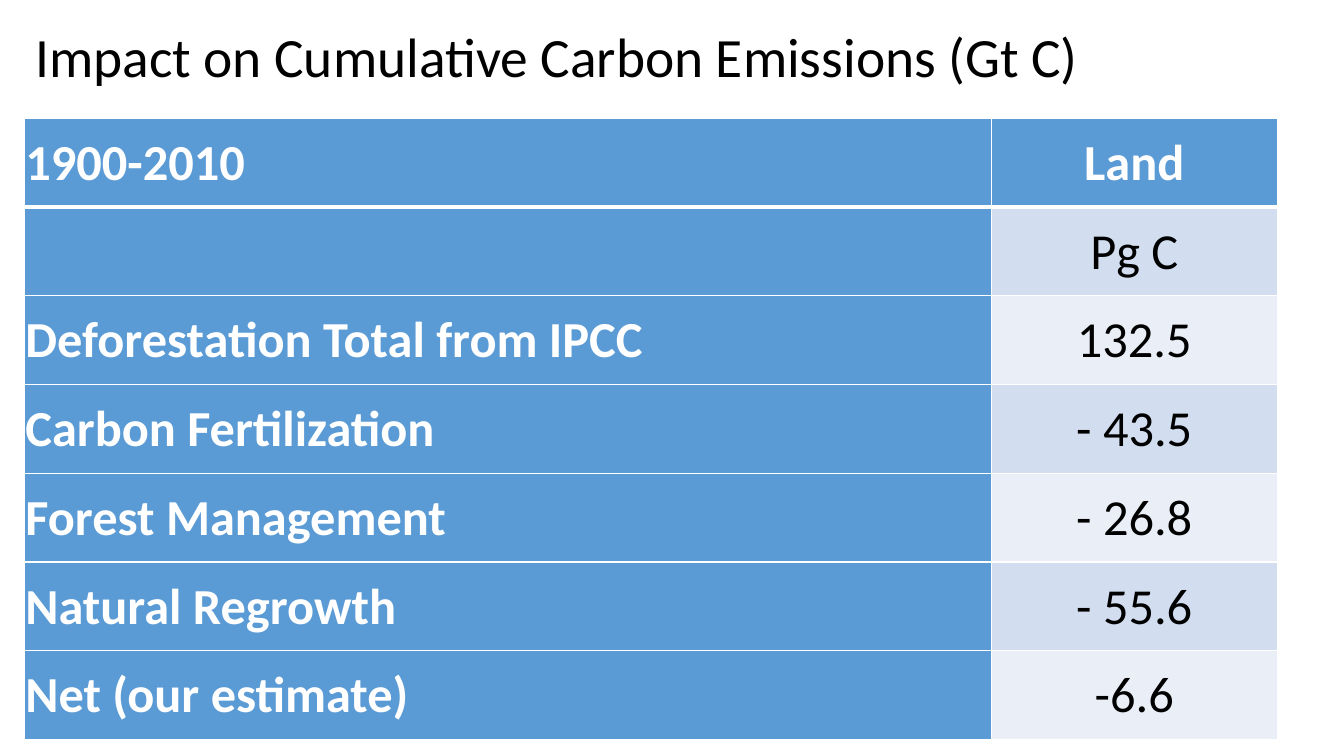
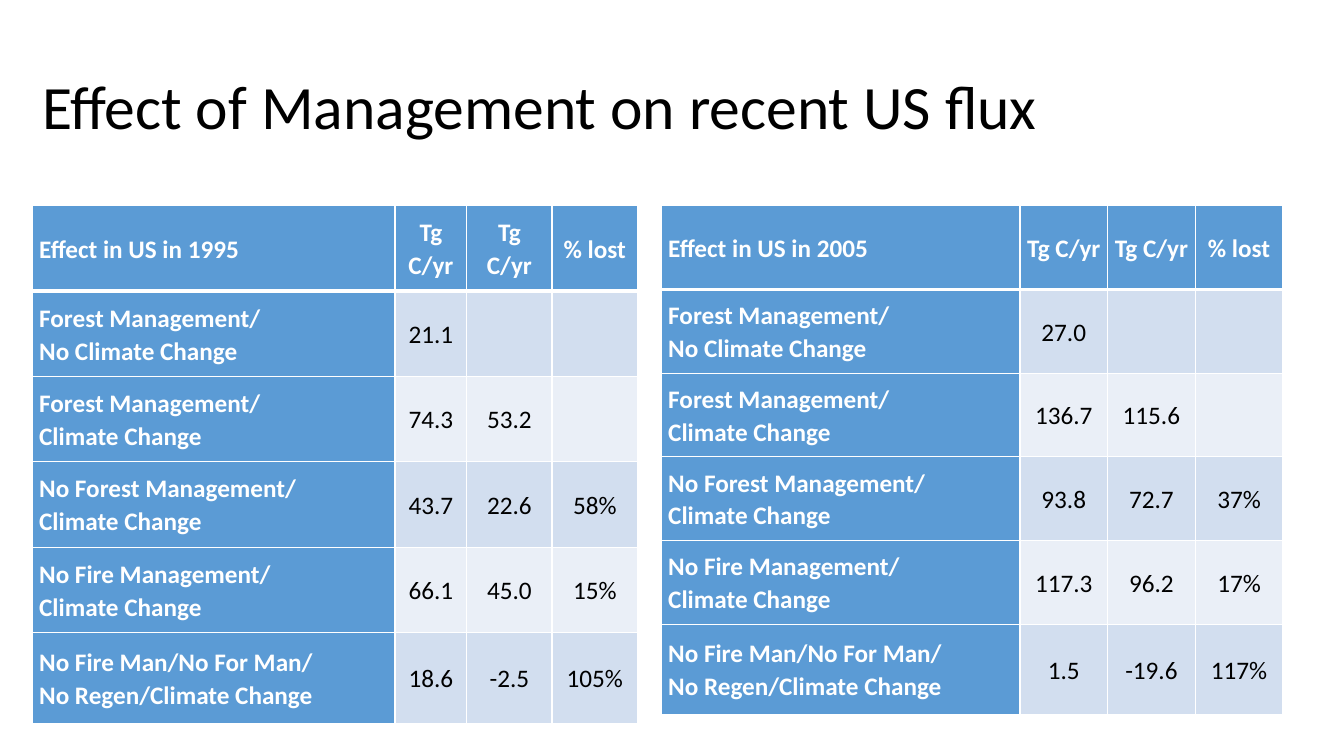
from dataclasses import dataclass

import pptx
import pptx.dml.color
import pptx.enum.text
import pptx.oxml
import pptx.oxml.ns
import pptx.util

Pt = pptx.util.Pt
ALIGN = pptx.enum.text.PP_ALIGN
MIDDLE = pptx.enum.text.MSO_ANCHOR.MIDDLE


@dataclass(frozen=True)
class Theme:
    font: str = "Calibri"
    ink: str = "000000"
    paper: str = "FFFFFF"
    accent: str = "5B9BD5"
    bands: tuple = ("D2DEEF", "EAEFF7")
    grid_line: float = 1
    header_line: float = 3
    title_size: float = 44
    compact_title_size: float = 39.6
    large_table_size: float = 36
    small_table_size: float = 18


@dataclass(frozen=True)
class TableStyle:
    """Type size, line spacing and (left, top, right, bottom) cell margins."""
    size: float
    line_spacing: float
    margins: tuple


THEME = Theme()
LARGE_TABLE = TableStyle(THEME.large_table_size, 1, (0.7, 0.7, 0.7, 0))
SMALL_TABLE = TableStyle(THEME.small_table_size, 1.07, (5, 0, 5, 0))

EMISSIONS = [
    ("1900-2010", "Land"),
    ("", "Pg C"),
    ("Deforestation Total from IPCC", "132.5"),
    ("Carbon Fertilization", "- 43.5"),
    ("Forest Management", "- 26.8"),
    ("Natural Regrowth", "- 55.6"),
    ("Net (our estimate)", "-6.6"),
]
SCENARIOS = [
    "Forest Management/\nNo Climate Change",
    "Forest Management/\nClimate Change",
    "No Forest Management/\nClimate Change",
    "No Fire Management/\nClimate Change",
    "No Fire Man/No For Man/\nNo Regen/Climate Change",
]
FLUX_1995 = [
    ("21.1", "", ""),
    ("74.3", "53.2", ""),
    ("43.7", "22.6", "58%"),
    ("66.1", "45.0", "15%"),
    ("18.6", "-2.5", "105%"),
]
FLUX_2005 = [
    ("27.0", "", ""),
    ("136.7", "115.6", ""),
    ("93.8", "72.7", "37%"),
    ("117.3", "96.2", "17%"),
    ("1.5", "-19.6", "117%"),
]


def color(value):
    return pptx.dml.color.RGBColor.from_string(value)


def flux_rows(year, values):
    header = (f"Effect in US in {year}", "Tg C/yr", "Tg C/yr", "% lost")
    return [header] + [(name, *row) for name, row in zip(SCENARIOS, values)]


class Slides:
    def __init__(self, theme):
        self.theme = theme
        self.deck = pptx.Presentation()
        self.deck.slide_width = Pt(960)
        self.deck.slide_height = Pt(540)
        self.page = None

    def new_page(self):
        self.page = self.deck.slides.add_slide(self.deck.slide_layouts[5])
        for holder in list(self.page.placeholders):
            if holder.placeholder_format.idx != 0:
                holder.element.getparent().remove(holder.element)

    def format_para(self, para, size, ink, bold, align, line_spacing):
        para.alignment = align
        para.line_spacing = line_spacing
        for font in [para.font] + [span.font for span in para.runs]:
            font.name = self.theme.font
            font.size = Pt(size)
            font.bold = bold
            font.color.rgb = color(ink)

    def title(self, text, left, top, width, height, size):
        box = self.page.shapes.title
        box.left, box.top = Pt(left), Pt(top)
        box.width, box.height = Pt(width), Pt(height)
        frame = box.text_frame
        frame.text = text
        frame.word_wrap = True
        frame.auto_size = pptx.enum.text.MSO_AUTO_SIZE.NONE
        frame.vertical_anchor = MIDDLE
        self.format_para(frame.paragraphs[0], size, self.theme.ink, False,
                         ALIGN.LEFT, 0.9)

    def borders(self, cell, row):
        """Draw the white grid, with a heavier line below the header row."""
        thin, thick = self.theme.grid_line, self.theme.header_line
        widths = {"L": thin, "R": thin,
                  "T": thick if row == 1 else thin,
                  "B": thick if row == 0 else thin}
        properties = cell._tc.get_or_add_tcPr()
        for side, width in widths.items():
            properties.append(pptx.oxml.parse_xml(
                f'<a:ln{side} {pptx.oxml.ns.nsdecls("a")} w="{Pt(width)}">'
                f'<a:solidFill><a:srgbClr val="{self.theme.paper}"/>'
                f'</a:solidFill></a:ln{side}>'))

    def cell(self, cell, text, row, column, style):
        heading = row == 0 or column == 0
        self.borders(cell, row)
        cell.fill.solid()
        cell.fill.fore_color.rgb = color(
            self.theme.accent if heading else self.theme.bands[(row - 1) % 2])
        (cell.margin_left, cell.margin_top,
         cell.margin_right, cell.margin_bottom) = map(Pt, style.margins)
        cell.vertical_anchor = MIDDLE
        cell.text_frame.text = text
        for para in cell.text_frame.paragraphs:
            self.format_para(para, style.size,
                             self.theme.paper if heading else self.theme.ink,
                             heading,
                             ALIGN.LEFT if column == 0 else ALIGN.CENTER,
                             style.line_spacing)

    def table(self, rows, left, top, widths, heights, style):
        table = self.page.shapes.add_table(
            len(rows), len(widths), Pt(left), Pt(top),
            Pt(sum(widths)), Pt(sum(heights))).table
        table.first_row = table.horz_banding = False
        for column, width in zip(table.columns, widths):
            column.width = Pt(width)
        for line, height in zip(table.rows, heights):
            line.height = Pt(height)
        for row, texts in enumerate(rows):
            for column, text in enumerate(texts):
                self.cell(table.cell(row, column), text, row, column, style)


def main():
    slides = Slides(THEME)

    slides.new_page()
    slides.title("Impact on Cumulative Carbon Emissions (Gt C)",
                 18, 0.7, 786, 83.5, THEME.compact_title_size)
    slides.table(EMISSIONS, 17.5, 84.5, [690.5, 204.5],
                 [63.4] * len(EMISSIONS), LARGE_TABLE)

    slides.new_page()
    slides.title("Effect of Management on recent US flux",
                 23, 26, 828, 104.4, THEME.title_size)
    slides.table(flux_rows(1995, FLUX_1995), 23, 147,
                 [259.2, 51.2, 61, 61], [61] * 5 + [65.2], SMALL_TABLE)
    slides.table(flux_rows(2005, FLUX_2005), 472.3, 147,
                 [256.3] + [62.6] * 3, [59.8] * 5 + [64.6], SMALL_TABLE)

    slides.deck.save("out.pptx")


if __name__ == "__main__":
    main()
